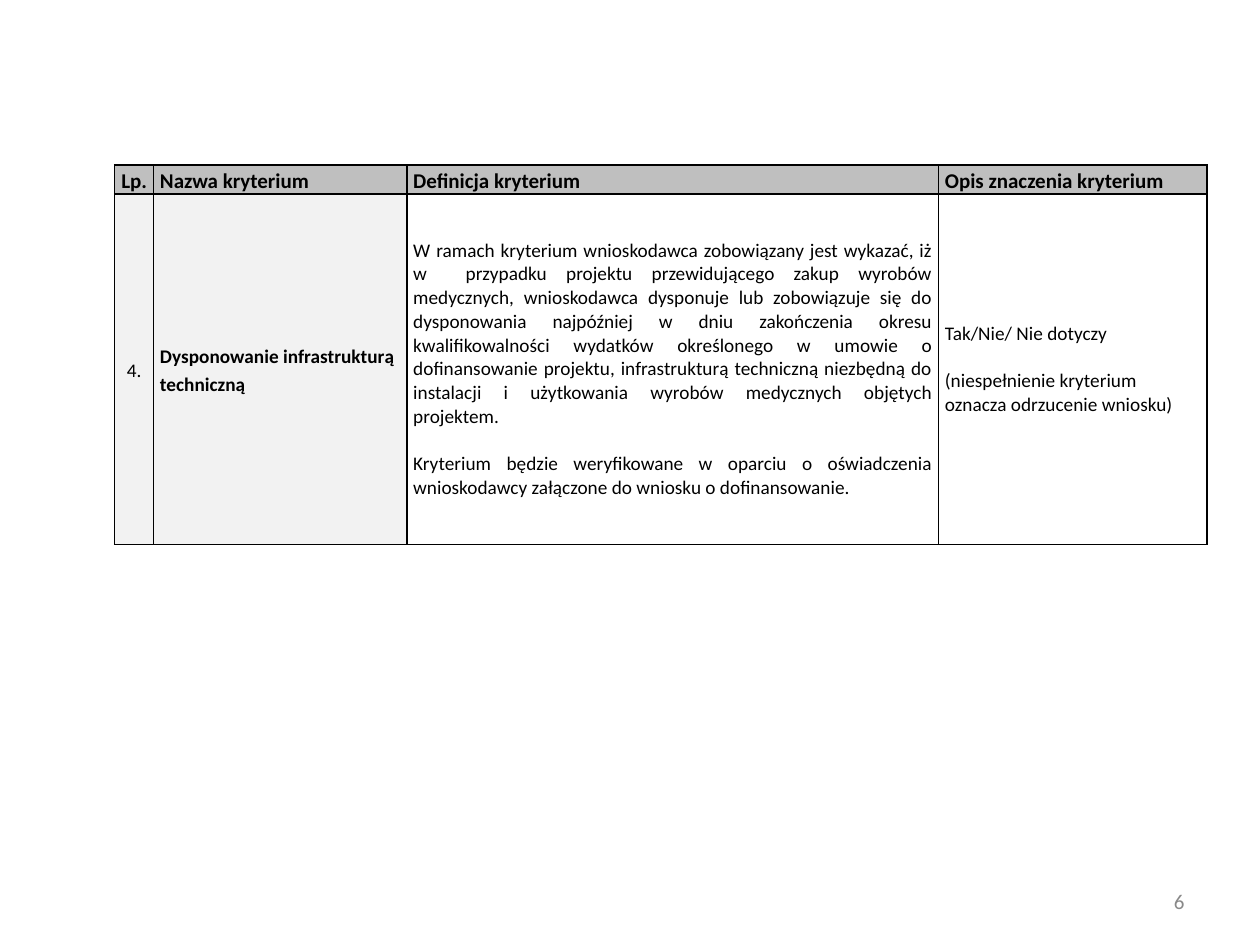
import pptx
import pptx.dml.color
import pptx.enum.text
import pptx.oxml
import pptx.oxml.ns
import pptx.util

ALIGN = pptx.enum.text.PP_ALIGN
MIDDLE = pptx.enum.text.MSO_ANCHOR.MIDDLE
WIDTH, HEIGHT = 10, 7.5


def color(hex_string):
    return pptx.dml.color.RGBColor.from_string(hex_string)


class CriteriaSlide:
    font = "Calibri"
    ink = "000000"
    muted = "898989"
    header_fill = "BFBFBF"
    label_fill = "F2F2F2"
    blank_line = 13.4

    def __init__(self, presentation):
        self.slide = presentation.slides.add_slide(presentation.slide_layouts[6])

    def x(self, share):
        return pptx.util.Inches(WIDTH * share)

    def y(self, share):
        return pptx.util.Inches(HEIGHT * share)

    def set_text(self, frame, lines, size, align=ALIGN.LEFT, bold=False,
                 ink=ink, spaced=False, gap_before=None):
        frame.word_wrap = True
        for index, line in enumerate(lines):
            paragraph = frame.paragraphs[0] if index == 0 else frame.add_paragraph()
            paragraph.text = line
            paragraph.alignment = align
            if spaced:
                paragraph.line_spacing = 1.15
                paragraph.space_after = pptx.util.Pt(10)
            if index == gap_before:
                paragraph.space_before = pptx.util.Pt(self.blank_line)
            paragraph.font.name = self.font
            paragraph.font.size = pptx.util.Pt(size)
            paragraph.font.bold = bold
            paragraph.font.color.rgb = color(ink)

    def page_number(self, number, left, top, width, height):
        box = self.slide.shapes.add_textbox(
            self.x(left), self.y(top), self.x(width), self.y(height))
        box.text_frame.vertical_anchor = MIDDLE
        self.set_text(box.text_frame, [number], 12, ALIGN.RIGHT, ink=self.muted)

    def borders(self, cell):
        properties = cell._tc.get_or_add_tcPr()
        for position, side in enumerate(("lnL", "lnR", "lnT", "lnB")):
            properties.insert(position, pptx.oxml.parse_xml(
                f'<a:{side} {pptx.oxml.ns.nsdecls("a")} w="12700"><a:solidFill>'
                f'<a:srgbClr val="{self.ink}"/></a:solidFill></a:{side}>'))

    def cell(self, cell, lines, fill, size, **text_style):
        cell.margin_left = cell.margin_right = pptx.util.Inches(0.05)
        cell.margin_top = cell.margin_bottom = 0
        cell.vertical_anchor = MIDDLE
        if fill:
            cell.fill.solid()
            cell.fill.fore_color.rgb = color(fill)
        else:
            cell.fill.background()
        self.borders(cell)
        self.set_text(cell.text_frame, lines, size, **text_style)

    def table(self, left, top, columns, rows):
        table = self.slide.shapes.add_table(
            len(rows), len(columns), self.x(left), self.y(top),
            self.x(sum(columns)), self.y(sum(rows))).table
        for column, share in zip(table.columns, columns):
            column.width = self.x(share)
        for row, share in zip(table.rows, rows):
            row.height = self.y(share)
        return table


def main():
    presentation = pptx.Presentation()
    presentation.slide_width = pptx.util.Inches(WIDTH)
    presentation.slide_height = pptx.util.Inches(HEIGHT)
    page = CriteriaSlide(presentation)
    page.page_number("6", 7.17 / WIDTH, 6.95 / HEIGHT, 2.33 / WIDTH, 0.4 / HEIGHT)

    criteria = page.table(
        0.91 / WIDTH, 1.31 / HEIGHT,
        [width / WIDTH for width in (0.31, 2.01, 4.22, 2.13)],
        [height / HEIGHT for height in (0.21, 2.78)])

    headings = ["Lp.", "Nazwa kryterium", "Definicja kryterium",
                "Opis znaczenia kryterium"]
    for index, heading in enumerate(headings):
        page.cell(criteria.cell(0, index), [heading], page.header_fill, 12,
                  align=ALIGN.LEFT if index else ALIGN.CENTER,
                  bold=True, spaced=True)

    definition = [
        "W ramach kryterium wnioskodawca zobowiązany jest wykazać, iż "
        "w  przypadku projektu przewidującego zakup wyrobów medycznych, "
        "wnioskodawca dysponuje lub zobowiązuje się do dysponowania "
        "najpóźniej w dniu zakończenia okresu kwalifikowalności wydatków "
        "określonego w umowie o dofinansowanie projektu, infrastrukturą "
        "techniczną niezbędną do instalacji i użytkowania wyrobów "
        "medycznych objętych projektem.",
        "Kryterium będzie weryfikowane w oparciu o oświadczenia "
        "wnioskodawcy załączone do wniosku o dofinansowanie.",
    ]
    meaning = ["Tak/Nie/ Nie dotyczy", "(niespełnienie kryterium",
               "oznacza odrzucenie wniosku)"]
    criterion = [
        (["4."], page.label_fill, dict(align=ALIGN.CENTER, spaced=True)),
        (["Dysponowanie infrastrukturą techniczną"], page.label_fill,
         dict(bold=True, spaced=True)),
        (definition, None, dict(align=ALIGN.JUSTIFY, gap_before=1)),
        (meaning, None, dict(gap_before=1)),
    ]
    for index, (lines, fill, text_style) in enumerate(criterion):
        page.cell(criteria.cell(1, index), lines, fill, 11, **text_style)

    presentation.save("out.pptx")


if __name__ == "__main__":
    main()
